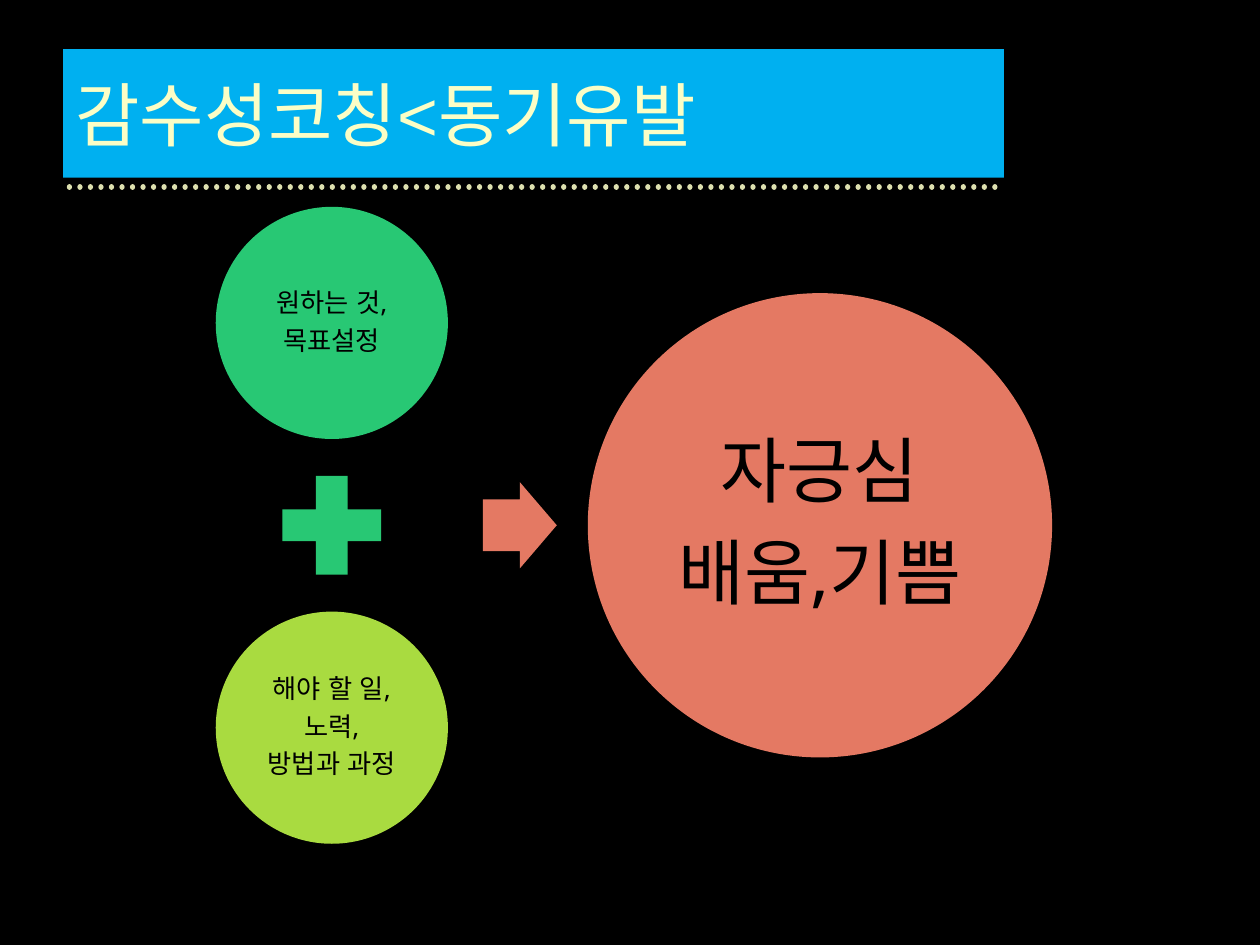
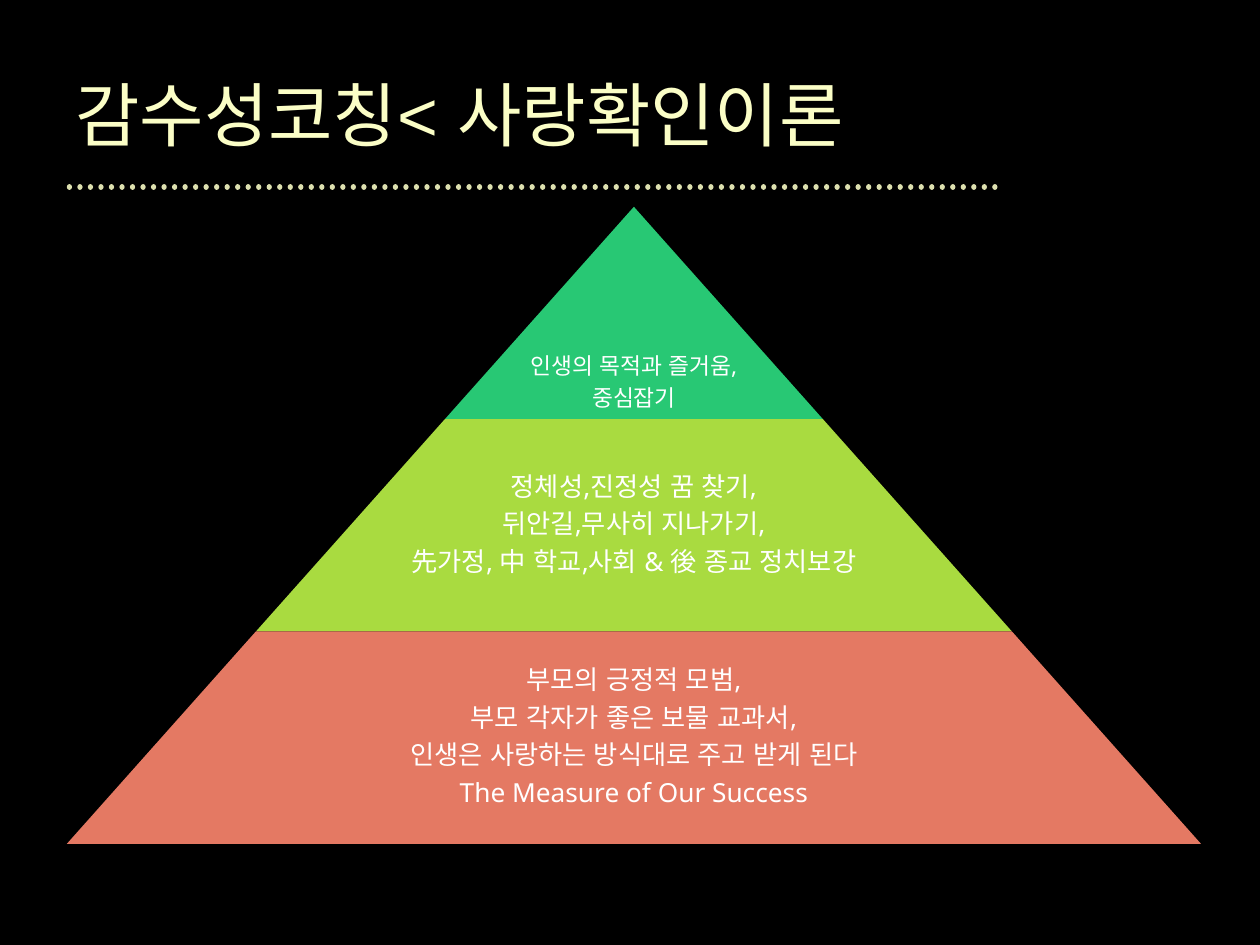
from dataclasses import dataclass

from lxml import etree
from pptx import Presentation
from pptx.dml.color import RGBColor
from pptx.enum import dml, lang, shapes, text
from pptx.oxml.ns import qn
from pptx.util import Cm, Pt

SHAPE = shapes.MSO_SHAPE


@dataclass(frozen=True)
class Theme:
    background: str = "000000"
    title: str = "FBFEC6"
    title_band: str = "00B0F0"
    rule: str = "DDE0AF"
    green: str = "28C874"
    lime: str = "A9DB40"
    coral: str = "E47963"
    dark: str = "000000"
    light: str = "FFFFFF"
    title_font: str = "Arial"
    body_font: str = "Noto Sans"
    title_size: int = 40
    result_size: int = 41
    body_size: int = 15
    peak_size: int = 13


def paint(fill, color):
    fill.solid()
    fill.fore_color.rgb = RGBColor.from_string(color)


def write(tf, content, *, size, color, font, align=text.PP_ALIGN.CENTER,
          anchor=text.MSO_ANCHOR.MIDDLE, line_spacing=None,
          after_percent=None, inset=None, wrap=True):
    """Fill a text frame, one paragraph for each line of content."""
    tf.word_wrap = wrap
    tf.auto_size = text.MSO_AUTO_SIZE.NONE
    tf.vertical_anchor = anchor
    if inset is not None:
        tf.margin_left = tf.margin_right = Cm(inset)
        tf.margin_top = tf.margin_bottom = Cm(inset)
    for i, line in enumerate(content.split("\n")):
        p = tf.add_paragraph() if i else tf.paragraphs[0]
        p.alignment = align
        if line_spacing:
            p.line_spacing = line_spacing
        if after_percent:
            after = etree.SubElement(p._p.get_or_add_pPr(), qn("a:spcAft"))
            etree.SubElement(after, qn("a:spcPct"), val=str(after_percent * 1000))
        r = p.add_run()
        r.text = line
        r.font.name = font
        r.font.size = Pt(size)
        r.font.language_id = lang.MSO_LANGUAGE_ID.KOREAN
        r.font.color.rgb = RGBColor.from_string(color)


class Deck:
    def __init__(self, theme):
        self.theme = theme
        self.prs = Presentation()
        self.prs.slide_width, self.prs.slide_height = Cm(25.4), Cm(19.05)
        paint(self.prs.slide_master.background.fill, theme.background)
        self.s = None

    def new_slide(self, title, band=None):
        t = self.theme
        self.s = self.prs.slides.add_slide(self.prs.slide_layouts[5])
        self.dotted_rule(1.4, 20.24, 3.77)
        sp = self.s.shapes.title
        sp.left, sp.top, sp.width, sp.height = Cm(1.27), Cm(0.99), Cm(18.97), Cm(2.59)
        if band:
            paint(sp.fill, band)
        write(sp.text_frame, title, size=t.title_size, color=t.title,
              font=t.title_font, align=text.PP_ALIGN.LEFT)

    def dotted_rule(self, x1, x2, y):
        c = self.s.shapes.add_connector(
            shapes.MSO_CONNECTOR.STRAIGHT, Cm(x1), Cm(y), Cm(x2), Cm(y))
        c.line.color.rgb = RGBColor.from_string(self.theme.rule)
        c.line.width = Pt(3)
        c.line.dash_style = dml.MSO_LINE.ROUND_DOT
        sp_pr = c._element.spPr
        sp_pr.find(qn("a:ln")).set("cap", "rnd")
        etree.SubElement(sp_pr, qn("a:effectLst"))

    def shape(self, kind, cx, cy, w, h, color, adjustments=()):
        """Add a borderless preset shape centred on (cx, cy)."""
        sp = self.s.shapes.add_shape(
            kind, Cm(cx - w / 2), Cm(cy - h / 2), Cm(w), Cm(h))
        sp.shadow.inherit = False
        paint(sp.fill, color)
        sp.line.fill.background()
        for i, value in enumerate(adjustments):
            sp.adjustments[i] = value
        return sp

    def body(self, tf, content, **fmt):
        t = self.theme
        defaults = dict(size=t.body_size, color=t.dark, font=t.body_font,
                        line_spacing=0.9, after_percent=35, inset=0.05)
        write(tf, content, **{**defaults, **fmt})

    def circle(self, cx, cy, d, color, content, **fmt):
        sp = self.shape(SHAPE.OVAL, cx, cy, d, d, color)
        self.body(sp.text_frame, content, wrap=False, **fmt)

    def tier(self, cx, top, w, h, slant, color, content, **fmt):
        """Add one pyramid level; its label spans the whole level."""
        self.shape(SHAPE.TRAPEZOID, cx, top + h / 2, w, h, color, [slant / h])
        box = self.s.shapes.add_textbox(Cm(cx - w / 2), Cm(top), Cm(w), Cm(h))
        self.body(box.text_frame, content, color=self.theme.light, **fmt)


def motivation_slide(deck):
    t = deck.theme
    deck.new_slide("감수성코칭<동기유발", band=t.title_band)
    column, middle, offset = 6.69, 10.59, 4.08
    deck.circle(column, middle - offset, 4.68, t.green, "원하는 것,\n목표설정")
    deck.shape(SHAPE.MATH_PLUS, column, middle, 2.71, 2.71, t.green)
    deck.circle(column, middle + offset, 4.68, t.lime,
                "해야 할 일,\n노력,\n방법과 과정")
    deck.shape(SHAPE.RIGHT_ARROW, 10.48, middle, 1.49, 1.74, t.coral, [0.6, 0.5])
    deck.circle(16.53, middle, 9.36, t.coral, "자긍심\n배움,기쁨",
                size=t.result_size, inset=0.15)


def love_slide(deck):
    t = deck.theme
    deck.new_slide("감수성코칭< 사랑확인이론")
    # The peak is narrow, so its label is smaller and sits on the wide base.
    peak = dict(size=t.peak_size, anchor=text.MSO_ANCHOR.BOTTOM, inset=0.15)
    tiers = [
        (t.green, "인생의 목적과 즐거움,\n중심잡기", peak),
        (t.lime, "정체성,진정성 꿈 찾기,\n뒤안길,무사히 지나가기,\n"
                 "先가정, 中 학교,사회 & 後 종교 정치보강", {}),
        (t.coral, "부모의 긍정적 모범,\n부모 각자가 좋은 보물 교과서,\n"
                  "인생은 사랑하는 방식대로 주고 받게 된다\n"
                  "The Measure of Our Success", {}),
    ]
    top, height, slant = 4.17, 4.28, 3.81
    for i, (color, content, fmt) in enumerate(tiers):
        deck.tier(12.78, top + i * height, 2 * slant * (i + 1), height,
                  slant, color, content, **fmt)


def main():
    deck = Deck(Theme())
    motivation_slide(deck)
    love_slide(deck)
    deck.prs.save("out.pptx")


if __name__ == "__main__":
    main()
